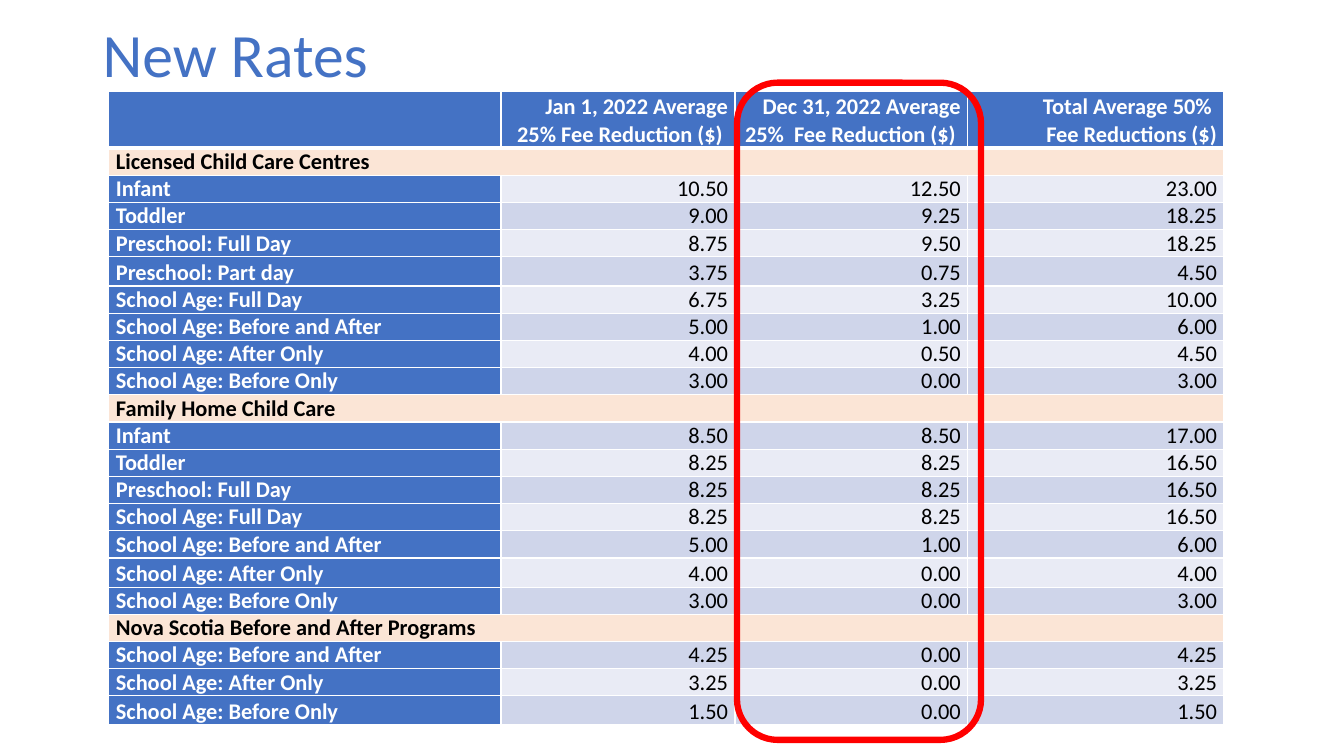
from lxml.etree import SubElement
from pptx import Presentation
from pptx.dml.color import RGBColor
from pptx.enum.shapes import MSO_SHAPE as Shape
from pptx.enum.text import MSO_ANCHOR as Anchor, PP_ALIGN as Align
from pptx.oxml.ns import qn
from pptx.util import Inches, Pt

COLORS = {
    "blue": "4472C4", "white": "FFFFFF", "black": "000000", "red": "FF0000",
    "section": "FBE5D6", "light": "E9EBF5", "dark": "CFD5EA",
}
HEADERS = [
    "",
    "Jan 1, 2022 Average 25% Fee Reduction ($) ",
    "Dec 31, 2022 Average 25%  Fee Reduction ($) ",
    "Total Average 50% \nFee Reductions ($)",
]
SECTIONS = {
    "Licensed Child Care Centres": [
        ("Infant", "10.50", "12.50", "23.00"),
        ("Toddler", "9.00", "9.25", "18.25"),
        ("Preschool: Full Day", "8.75", "9.50", "18.25"),
        ("Preschool: Part day", "3.75", "0.75", "4.50"),
        ("School Age: Full Day", "6.75", "3.25", "10.00"),
        ("School Age: Before and After", "5.00", "1.00", "6.00"),
        ("School Age: After Only", "4.00", "0.50", "4.50"),
        ("School Age: Before Only", "3.00", "0.00", "3.00"),
    ],
    "Family Home Child Care": [
        ("Infant", "8.50", "8.50", "17.00"),
        ("Toddler", "8.25", "8.25", "16.50"),
        ("Preschool: Full Day", "8.25", "8.25", "16.50"),
        ("School Age: Full Day", "8.25", "8.25", "16.50"),
        ("School Age: Before and After", "5.00", "1.00", "6.00"),
        ("School Age: After Only", "4.00", "0.00", "4.00"),
        ("School Age: Before Only", "3.00", "0.00", "3.00"),
    ],
    "Nova Scotia Before and After Programs": [
        ("School Age: Before and After", "4.25", "0.00", "4.25"),
        ("School Age: After Only", "3.25", "0.00", "3.25"),
        ("School Age: Before Only", "1.50", "0.00", "1.50"),
    ],
}
COLUMN_WIDTHS = [3.89, 2.32, 2.31, 2.54]
HEADER_HEIGHT, ROW_HEIGHT, TALL_HEIGHT = 0.56, 0.27, 0.29
TALL_ROWS = {5, 16, 21}


def rgb(name):
    """Return the named colour."""
    return RGBColor.from_string(COLORS[name])


def write_text(frame, text, size=16, color="black", bold=False, align=Align.LEFT, spacing=1.0):
    """Fill a text frame, one paragraph for each line of text."""
    frame.word_wrap = True
    for index, line in enumerate(text.split("\n")):
        paragraph = frame.add_paragraph() if index else frame.paragraphs[0]
        paragraph.alignment = align
        paragraph.line_spacing = spacing
        run = paragraph.add_run()
        run.text = line
        run.font.name = "Calibri"
        run.font.size = Pt(size)
        run.font.bold = bold
        run.font.color.rgb = rgb(color)


def add_borders(cell, bottom=1):
    """Draw white lines on the four sides of a cell."""
    properties = cell._tc.get_or_add_tcPr()
    for side, width in (("L", 1), ("R", 1), ("T", 1), ("B", bottom)):
        line = SubElement(properties, qn(f"a:ln{side}"), w=str(Pt(width)))
        fill = SubElement(line, qn("a:solidFill"))
        SubElement(fill, qn("a:srgbClr"), val=COLORS["white"])


def style_cell(cell, fill, bottom=1):
    """Set the borders, fill, margins and anchor of a cell."""
    add_borders(cell, bottom)
    cell.fill.solid()
    cell.fill.fore_color.rgb = rgb(fill)
    cell.margin_left = cell.margin_right = Inches(0.07)
    cell.margin_top = cell.margin_bottom = 0
    cell.vertical_anchor = Anchor.BOTTOM


def add_title(slide, text):
    """Add the slide title."""
    title = slide.shapes.add_textbox(Inches(0.92), Inches(0.22), Inches(11.5), Inches(0.7))
    frame = title.text_frame
    frame.margin_top = frame.margin_bottom = 0
    frame.vertical_anchor = Anchor.MIDDLE
    write_text(frame, text, size=44, color="blue", spacing=0.9)


def fill_header(table):
    """Write the header row."""
    for column, header in enumerate(HEADERS):
        cell = table.cell(0, column)
        style_cell(cell, "blue", bottom=3)
        if header:
            write_text(cell.text_frame, header, color="white", bold=True, align=Align.RIGHT)


def fill_section(table, row, name):
    """Write a section heading across the whole row."""
    heading = table.cell(row, 0)
    heading.merge(table.cell(row, len(HEADERS) - 1))
    style_cell(heading, "section")
    write_text(heading.text_frame, name, bold=True)


def fill_rates(table, row, rates):
    """Write one programme and its rates."""
    band = "dark" if row % 2 else "light"
    for column, text in enumerate(rates):
        cell = table.cell(row, column)
        style_cell(cell, band if column else "blue")
        if column:
            write_text(cell.text_frame, text, align=Align.RIGHT)
        else:
            write_text(cell.text_frame, text, color="white", bold=True)


def add_rate_table(slide):
    """Add the table of fee reductions."""
    row_count = 1 + sum(1 + len(programs) for programs in SECTIONS.values())
    heights = [HEADER_HEIGHT] + [
        TALL_HEIGHT if row in TALL_ROWS else ROW_HEIGHT for row in range(1, row_count)
    ]
    table = slide.shapes.add_table(
        row_count, len(HEADERS), Inches(1.08), Inches(0.91),
        Inches(sum(COLUMN_WIDTHS)), Inches(sum(heights)),
    ).table
    table.horz_banding = False
    for column, width in zip(table.columns, COLUMN_WIDTHS):
        column.width = Inches(width)
    for row, height in zip(table.rows, heights):
        row.height = Inches(height)

    fill_header(table)
    row = 1
    for name, programs in SECTIONS.items():
        fill_section(table, row, name)
        for row, rates in enumerate(programs, row + 1):
            fill_rates(table, row, rates)
        row += 1


def add_highlight(slide):
    """Outline the December column."""
    highlight = slide.shapes.add_shape(
        Shape.ROUNDED_RECTANGLE, Inches(7.31), Inches(0.82), Inches(2.42), Inches(6.52))
    highlight.shadow.inherit = False
    highlight.fill.background()
    highlight.line.color.rgb = rgb("red")
    highlight.line.width = Pt(4.5)


def main():
    """Build and save the slide."""
    deck = Presentation()
    deck.slide_width, deck.slide_height = Inches(13.33), Inches(7.5)
    slide = deck.slides.add_slide(deck.slide_layouts[6])
    add_title(slide, "New Rates")
    add_rate_table(slide)
    add_highlight(slide)
    deck.save("out.pptx")


if __name__ == "__main__":
    main()
